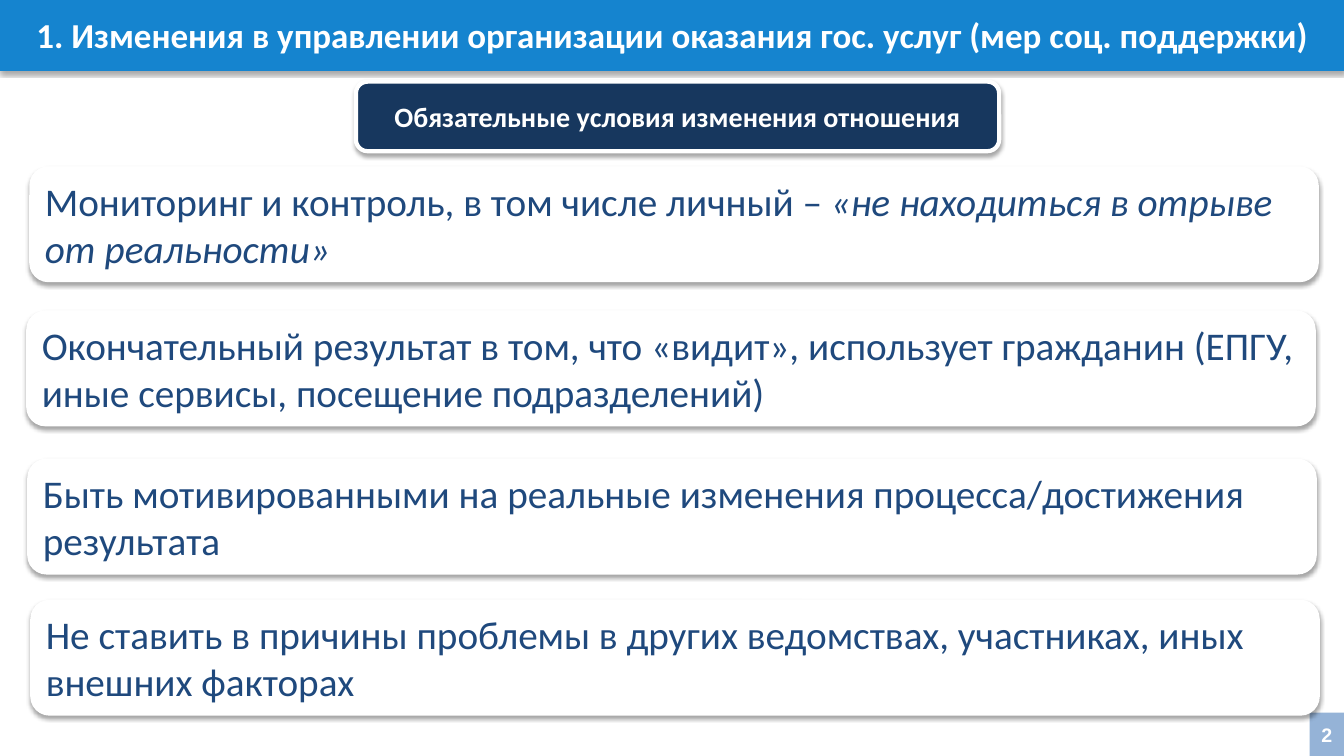
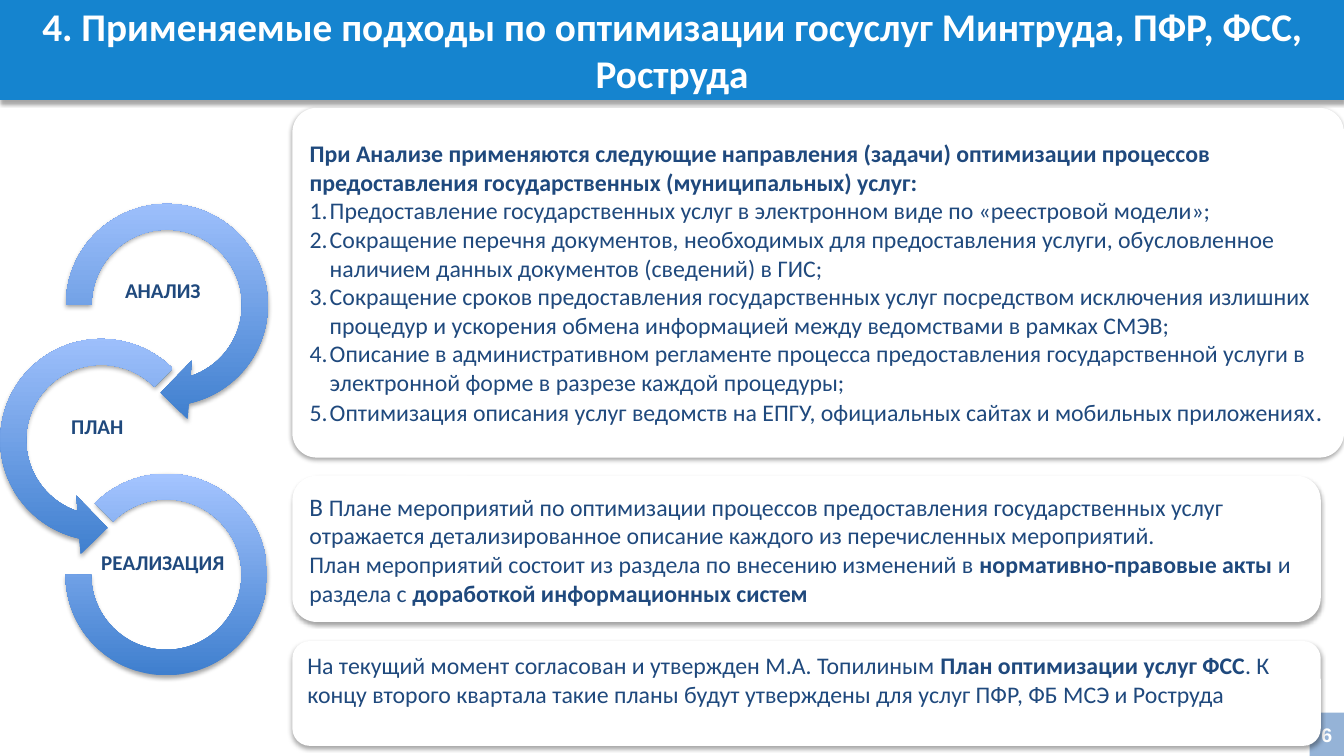
from dataclasses import dataclass

from lxml import etree
from pptx import Presentation
from pptx.dml.color import RGBColor
from pptx.enum import shapes, text
from pptx.oxml.ns import qn
from pptx.util import Inches, Pt


@dataclass(frozen=True)
class Theme:
    font: str = "Calibri"
    number_font: str = "Arial"
    white: str = "FFFFFF"
    band: str = "1584CF"
    ink: str = "1F497D"
    navy: str = "17375E"
    corner: str = "95B3D7"
    ring_low: str = "3F7FCE"
    ring_high: str = "A4C4FF"
    statement: int = 28
    heading: int = 20
    first: int = 18
    body: int = 17
    label: int = 15
    number: int = 14


theme = Theme()
kind = shapes.MSO_SHAPE
center, left = text.PP_ALIGN.CENTER, text.PP_ALIGN.LEFT
middle, top = text.MSO_ANCHOR.MIDDLE, text.MSO_ANCHOR.TOP


def style(shape, fill, line=None, width=0.75, shadow=True):
    """Fill and outline a shape; a None fill gives the ring gradient."""
    if fill:
        shape.fill.solid()
        shape.fill.fore_color.rgb = RGBColor.from_string(fill)
    else:
        shape.fill.gradient()
        shape.fill.gradient_angle = 90
        for stop, color in zip(shape.fill.gradient_stops, (theme.ring_low, theme.ring_high)):
            stop.color.rgb = RGBColor.from_string(color)
    if line:
        shape.line.color.rgb = RGBColor.from_string(line)
        shape.line.width = Pt(width)
    else:
        shape.line.fill.background()
    shape.shadow.inherit = False
    if shadow:
        effects = shape._element.spPr.find(qn("a:effectLst"))
        outer = etree.SubElement(effects, qn("a:outerShdw"), blurRad="40000", dist="23000",
                                 dir="5400000", rotWithShape="0")
        color = etree.SubElement(outer, qn("a:srgbClr"), val="000000")
        etree.SubElement(color, qn("a:alpha"), val="35000")


def write(shape, paragraphs, size, color=theme.ink, align=left, anchor=middle,
          bold=False, font=theme.font):
    """Each paragraph is a list of (text, changes) runs; changes override the font."""
    frame = shape.text_frame
    frame.word_wrap = True
    frame.auto_size = text.MSO_AUTO_SIZE.NONE
    frame.vertical_anchor = anchor
    for index, runs in enumerate(paragraphs):
        para = frame.paragraphs[0] if index == 0 else frame.add_paragraph()
        para.alignment = align
        para.space_before = Pt(0)
        for words, changes in runs:
            span = para.add_run()
            span.text = words
            span.font.name = font
            span.font.size = Pt(changes.get("size", size))
            span.font.bold = changes.get("bold", bold)
            span.font.italic = changes.get("italic", False)
            span.font.color.rgb = RGBColor.from_string(color)


deck = Presentation()
deck.slide_width, deck.slide_height = Inches(13.33), Inches(7.5)

# Shared title band and page number
pages = []
for layout, title, size, height, number in [
    (5, "1. Изменения в управлении организации оказания гос. услуг (мер соц. поддержки)",
     25, 0.71, "2"),
    (1, "4. Применяемые подходы по оптимизации госуслуг Минтруда, ПФР, ФСС, Роструда",
     28, 1, "6"),
]:
    page = deck.slides.add_slide(deck.slide_layouts[layout])
    band = page.shapes.title
    band.left, band.top = Inches(0), Inches(-0.01)
    band.width, band.height = deck.slide_width, Inches(height)
    style(band, theme.band, theme.band)
    write(band, [[(title, {})]], size, theme.white, center, bold=True)

    corner = page.shapes.add_shape(kind.RECTANGLE, Inches(12.99), Inches(7.07),
                                   Inches(0.34), Inches(0.43))
    style(corner, theme.corner, shadow=False)
    write(corner, [[(number, {})]], theme.number, theme.white, center, bold=True,
          font=theme.number_font)
    corner.text_frame.margin_left = corner.text_frame.margin_right = Inches(0.09)
    pages.append(page)
conditions, approaches = pages

# Slide 1: conditions
for x, y, runs in [
    (0.29, 1.65, [("Мониторинг и контроль, в том числе личный – ", {}),
                  ("«не находиться в отрыве от реальности»", {"italic": True})]),
    (0.26, 3.08, [("Окончательный результат в том, что «видит», использует гражданин "
                   "(ЕПГУ, иные сервисы, посещение подразделений)", {})]),
    (0.27, 4.55, [("Быть мотивированными на реальные изменения процесса/достижения "
                   "результата", {})]),
    (0.3, 5.95, [("Не ставить в причины проблемы в других ведомствах, участниках, "
                  "иных внешних факторах", {})]),
]:
    card = conditions.shapes.add_shape(kind.ROUNDED_RECTANGLE, Inches(x), Inches(y),
                                       Inches(12.79), Inches(1.15))
    style(card, theme.white)
    write(card, [runs], theme.statement)

heading = conditions.shapes.add_shape(kind.ROUNDED_RECTANGLE, Inches(3.53), Inches(0.81),
                                      Inches(6.38), Inches(0.69))
style(heading, theme.navy, theme.white, 3)
write(heading, [[("Обязательные условия изменения отношения", {})]], theme.heading,
      theme.white, center, bold=True)

# Slide 2: numbered tasks in the body placeholder
tasks = approaches.placeholders[1]
tasks.left, tasks.top = Inches(2.9), Inches(1.07)
tasks.width, tasks.height = Inches(10.43), Inches(3.47)
outline = etree.SubElement(tasks._element.spPr, qn("a:prstGeom"), prst="roundRect")
guides = etree.SubElement(outline, qn("a:avLst"))
etree.SubElement(guides, qn("a:gd"), name="adj", fmla="val 7000")
style(tasks, theme.white)
write(tasks, [
    [("При Анализе применяются следующие направления (задачи) оптимизации процессов "
      "предоставления государственных (муниципальных) услуг:", {"bold": True})],
    [("Предоставление государственных услуг в электронном виде по «реестровой модели»;", {})],
    [("Сокращение перечня документов, необходимых для предоставления услуги, обусловленное "
      "наличием данных документов (сведений) в ГИС;", {})],
    [("Сокращение сроков предоставления государственных услуг посредством исключения излишних "
      "процедур и ускорения обмена информацией между ведомствами в рамках СМЭВ;", {})],
    [("Описание в административном регламенте процесса предоставления государственной услуги в "
      "электронной форме в разрезе каждой процедуры;", {})],
    [("Оптимизация описания услуг ведомств на ЕПГУ, официальных сайтах и мобильных приложениях",
      {}), (".", {"size": theme.first})],
], theme.body)
for index, para in enumerate(tasks.text_frame.paragraphs):
    props = para._p.get_or_add_pPr()
    indent = Inches(0.2) if index else 0
    props.set("marL", str(indent))
    props.set("indent", str(-indent))
    if index:
        etree.SubElement(props, qn("a:buFont"), typeface="+mj-lt")
        etree.SubElement(props, qn("a:buAutoNum"), type="arabicPeriod")
    else:
        etree.SubElement(props, qn("a:buNone"))

# Slide 2: plan and status cards
for y, height, anchor, paragraphs in [
    (4.72, 1.45, middle, [
        [("В ", {"size": theme.first}),
         ("Плане мероприятий по оптимизации процессов предоставления государственных услуг "
          "отражается детализированное описание каждого из перечисленных мероприятий.", {})],
        [("План мероприятий состоит из раздела по внесению изменений в ", {}),
         ("нормативно-правовые акты ", {"bold": True}),
         ("и раздела с ", {}),
         ("доработкой информационных систем", {"bold": True})]]),
    (6.36, 1.04, top, [
        [("На текущий момент согласован и утвержден М.А. Топилиным ", {}),
         ("План оптимизации услуг ФСС", {"bold": True}),
         (". К концу второго квартала такие планы будут утверждены для услуг ПФР, ФБ МСЭ "
          "и Роструда", {})]]),
]:
    card = approaches.shapes.add_shape(kind.ROUNDED_RECTANGLE, Inches(2.9), Inches(y),
                                       Inches(10.2), Inches(height))
    style(card, theme.white)
    write(card, paragraphs, theme.body, anchor=anchor)

# Slide 2: chain of stages
for preset, x, y, side, adjustments, label, label_x, label_y in [
    (kind.CIRCULAR_ARROW, 0.49, 1.86, 2.33, (0.11, 11.42, 45, 108, 0.125),
     "АНАЛИЗ", 0.97, 2.57),
    (kind.LEFT_CIRCULAR_ARROW, -0.16, 3.2, 2.33, (0.11, 11.42, 63, 189, 0.125),
     "ПЛАН", 0.32, 3.92),
    (kind.BLOCK_ARC, 0.65, 4.7, 2, (135, 108, 0.127),
     "РЕАЛИЗАЦИЯ", 0.97, 5.27),
]:
    ring = approaches.shapes.add_shape(preset, Inches(x), Inches(y), Inches(side), Inches(side))
    for index, value in enumerate(adjustments):
        ring.adjustments[index] = value
    style(ring, None)

    caption = approaches.shapes.add_textbox(Inches(label_x), Inches(label_y),
                                            Inches(1.29), Inches(0.65))
    write(caption, [[(label, {})]], theme.label, align=center, bold=True)
    frame = caption.text_frame
    frame.margin_left = frame.margin_right = Inches(0.01)
    frame.margin_top = frame.margin_bottom = Inches(0.01)
    frame.paragraphs[0].line_spacing = 0.9

deck.save("out.pptx")
